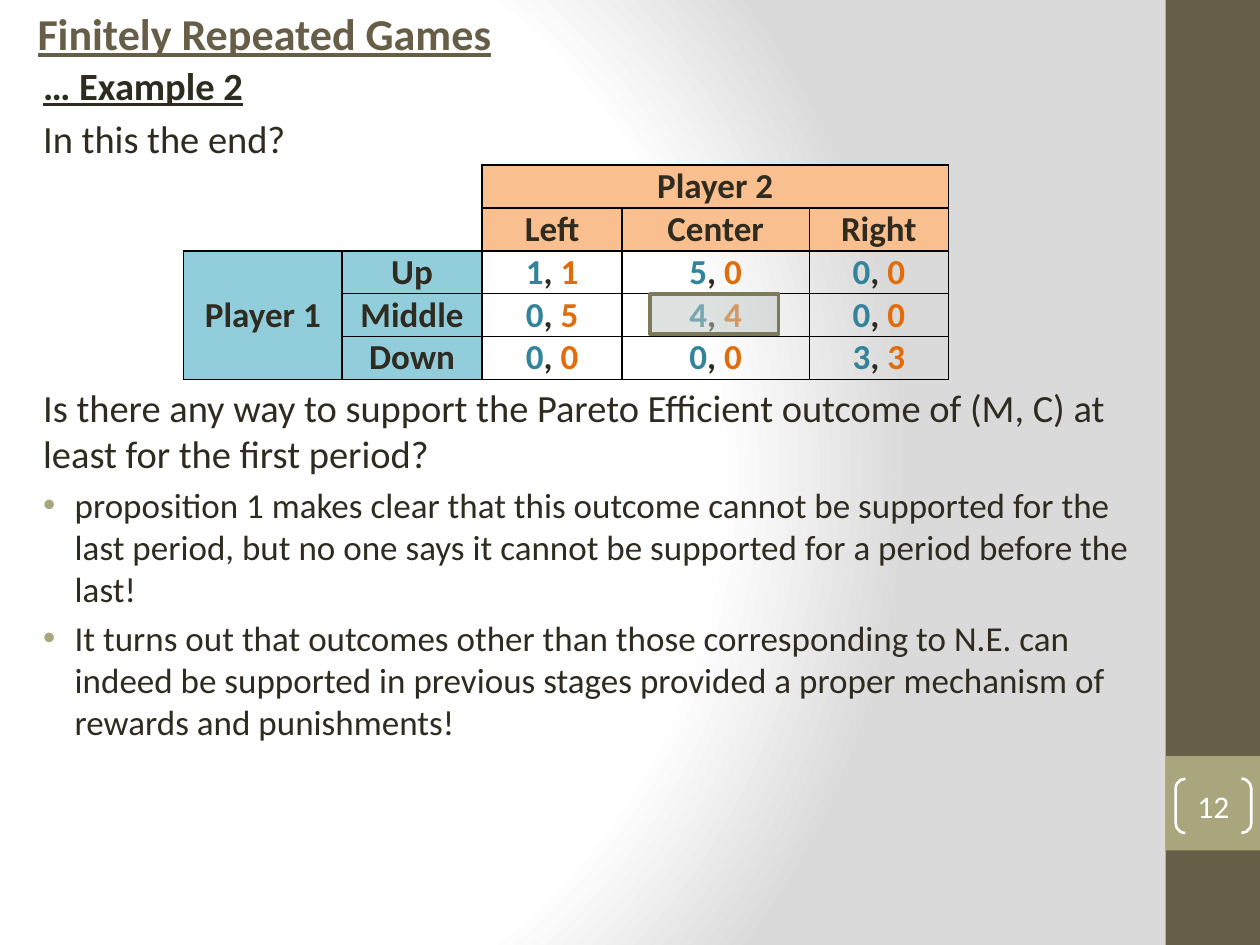
from pptx import Presentation
from pptx.dml.color import RGBColor
from pptx.enum import shapes, text
from pptx.oxml import parse_xml
from pptx.oxml.ns import nsdecls
from pptx.util import Pt

HUES = {
    "dark": "675E47", "sage": "A9A57C", "ink": "2F2B20", "white": "FFFFFF",
    "grey": "DADADA", "black": "000000", "peach": "FABF8F", "aqua": "92CDDC",
    "teal": "31849B", "rust": "E36C0A", "mist": "BFC8C4", "edge": "7D7A5C",
}
PLAIN = "{2D5ABB26-0587-4C30-8999-92F81FD0307C}"
MID = text.MSO_ANCHOR.MIDDLE
CENTER = text.PP_ALIGN.CENTER


def rgb(name):
    return RGBColor.from_string(HUES[name])


def xml(tag, body="", attrs=""):
    return parse_xml(f"<{tag} {nsdecls('a', 'p')} {attrs}>{body}</{tag}>")


def solid(name, inner=""):
    return f'<a:solidFill><a:srgbClr val="{HUES[name]}">{inner}</a:srgbClr></a:solidFill>'


def write(para, words, size=22, hue="ink", bold=False, line=False,
          align=None, before=0, indent=(0, 0), bullet=False):
    """Fill a paragraph; words is a string or a list of (string, hue)."""
    props = para._p.get_or_add_pPr()
    left, first = indent
    props.set("marL", str(Pt(left)))
    props.set("indent", str(Pt(first)))
    if bullet:
        props.append(xml("a:buClr", f'<a:srgbClr val="{HUES["sage"]}"/>'))
        props.append(xml("a:buFont", attrs='typeface="Arial"'))
        props.append(xml("a:buChar", attrs='char="•"'))
    if before:
        para.space_before = Pt(before)
    para.alignment = align
    for part, tint in [(words, hue)] if isinstance(words, str) else words:
        run = para.add_run()
        run.text = part
        font = run.font
        font.name, font.size, font.bold = "Calibri", Pt(size), bold
        font.underline = line or None
        font.color.rgb = rgb(tint)


class Deck:
    def __init__(self, wide, high):
        self.show = Presentation()
        self.show.slide_width, self.show.slide_height = Pt(wide), Pt(high)
        self.slide = self.show.slides.add_slide(self.show.slide_layouts[6])

    def glow(self, stops):
        """Set a radial background from (percent, hue) stops."""
        marks = "".join(
            f'<a:gs pos="{pos * 1000}"><a:srgbClr val="{HUES[hue]}"/></a:gs>'
            for pos, hue in stops)
        self.slide.element.cSld.insert(0, xml(
            "p:bg", f'<p:bgPr><a:gradFill rotWithShape="1"><a:gsLst>{marks}</a:gsLst>'
            '<a:path path="circle"><a:fillToRect l="20000" t="50000" r="100000" b="50000"/>'
            '</a:path></a:gradFill><a:effectLst/></p:bgPr>'))

    def shape(self, box, kind="RECTANGLE", fill=None, line=None, width=1, alpha=None):
        item = self.slide.shapes.add_shape(
            getattr(shapes.MSO_SHAPE, kind), *map(Pt, box))
        item.shadow.inherit = False
        if fill:
            item.fill.solid()
            item.fill.fore_color.rgb = rgb(fill)
            if alpha:
                tint = item._element.spPr.find(".//" + "{*}srgbClr")
                tint.append(xml("a:alpha", attrs=f'val="{alpha * 1000}"'))
        else:
            item.fill.background()
        if line:
            item.line.color.rgb = rgb(line)
            item.line.width = Pt(width)
        else:
            item.line.fill.background()
        return item

    def label(self, box, paras, anchor=text.MSO_ANCHOR.TOP):
        """Add a text box from (words, format) pairs."""
        frame = self.slide.shapes.add_textbox(*map(Pt, box)).text_frame
        frame.word_wrap, frame.vertical_anchor = True, anchor
        for i, (words, form) in enumerate(paras):
            para = frame.add_paragraph() if i else frame.paragraphs[0]
            write(para, words, **form)

    def grid(self, left, top, cols, rows, high):
        table = self.slide.shapes.add_table(
            rows, len(cols), Pt(left), Pt(top), Pt(sum(cols)), Pt(rows * high)).table
        table._tbl.tblPr.find("{*}tableStyleId").text = PLAIN
        table.first_row = table.horz_banding = False
        for col, wide in zip(table.columns, cols):
            col.width = Pt(wide)
        for row in table.rows:
            row.height = Pt(high)
        for cell in table.iter_cells():
            cell.margin_left = cell.margin_right = Pt(5)
            cell.margin_top = cell.margin_bottom = 0
            cell.fill.background()
        return table

    def cell(self, cell, words=None, fill=None):
        """Frame a cell in black; words and fill are optional."""
        if fill:
            cell.fill.solid()
            cell.fill.fore_color.rgb = rgb(fill)
        cell.vertical_anchor = MID
        props = cell._tc.get_or_add_tcPr()
        for i, side in enumerate("LRTB"):
            props.insert(i, xml(f"a:ln{side}", solid("black"), f'w="{Pt(1)}"'))
        if words:
            write(cell.text_frame.paragraphs[0], words, size=20, bold=True, align=CENTER)


def main():
    deck = Deck(720, 540)
    deck.glow([(0, "white"), (75, "white"), (100, "grey")])
    deck.shape((666, 0, 54, 540), fill="dark")
    deck.shape((666, 432, 54, 54), fill="sage")

    deck.label((14.4, 0, 648, 37.5), [
        ("Finitely Repeated Games", dict(size=25.2, hue="dark", bold=True, line=True)),
    ], MID)
    base = dict(indent=(9, 0))
    point = dict(size=20, indent=(27, -18), before=4, bullet=True)
    deck.label((8.6, 32, 653.8, 430), [
        ("… Example 2", dict(base, bold=True, line=True)),
        ("In this the end?", dict(base, before=4)),
        ("Is there any way to support the Pareto Efficient outcome of (M, C) "
         "at least for the first period?", dict(base, before=127)),
        ("proposition 1 makes clear that this outcome cannot be supported for the "
         "last period, but no one says it cannot be supported for a period before "
         "the last!", point),
        ("It turns out that outcomes other than those corresponding to N.E. can "
         "indeed be supported in previous stages provided a proper mechanism of "
         "rewards and punishments!", point),
    ])

    page = deck.shape((671.8, 445, 43.2, 31), "DOUBLE_BRACKET", line="white", width=1.5)
    page.adjustments[0] = 0.18
    frame = page.text_frame
    frame.margin_left = frame.margin_right = frame.margin_top = frame.margin_bottom = 0
    frame.vertical_anchor = MID
    write(frame.paragraphs[0], "12", size=18, hue="white", align=CENTER)

    table = deck.grid(105, 94.3, [90.5, 80, 80, 107, 79.5], 5, 24.5)
    table.cell(0, 2).merge(table.cell(0, 4))
    table.cell(2, 0).merge(table.cell(4, 0))
    moves = ["Left", "Center", "Right"]
    games = {"Up": ["11", "50", "00"], "Middle": ["05", "44", "00"],
             "Down": ["00", "00", "33"]}
    for c, move in enumerate(moves, 2):
        deck.cell(table.cell(0, c), "Player 2" if c == 2 else None, "peach")
        deck.cell(table.cell(1, c), move, "peach")
    for r, (move, pays) in enumerate(games.items(), 2):
        deck.cell(table.cell(r, 0), "Player 1" if r == 2 else None, "aqua")
        deck.cell(table.cell(r, 1), move, "aqua")
        for c, (one, two) in enumerate(pays, 2):
            deck.cell(table.cell(r, c), [(one, "teal"), (", ", "ink"), (two, "rust")])

    deck.shape((371.5, 168, 73.5, 23), fill="mist", line="edge", width=2, alpha=50)
    deck.show.save("out.pptx")


if __name__ == "__main__":
    main()
